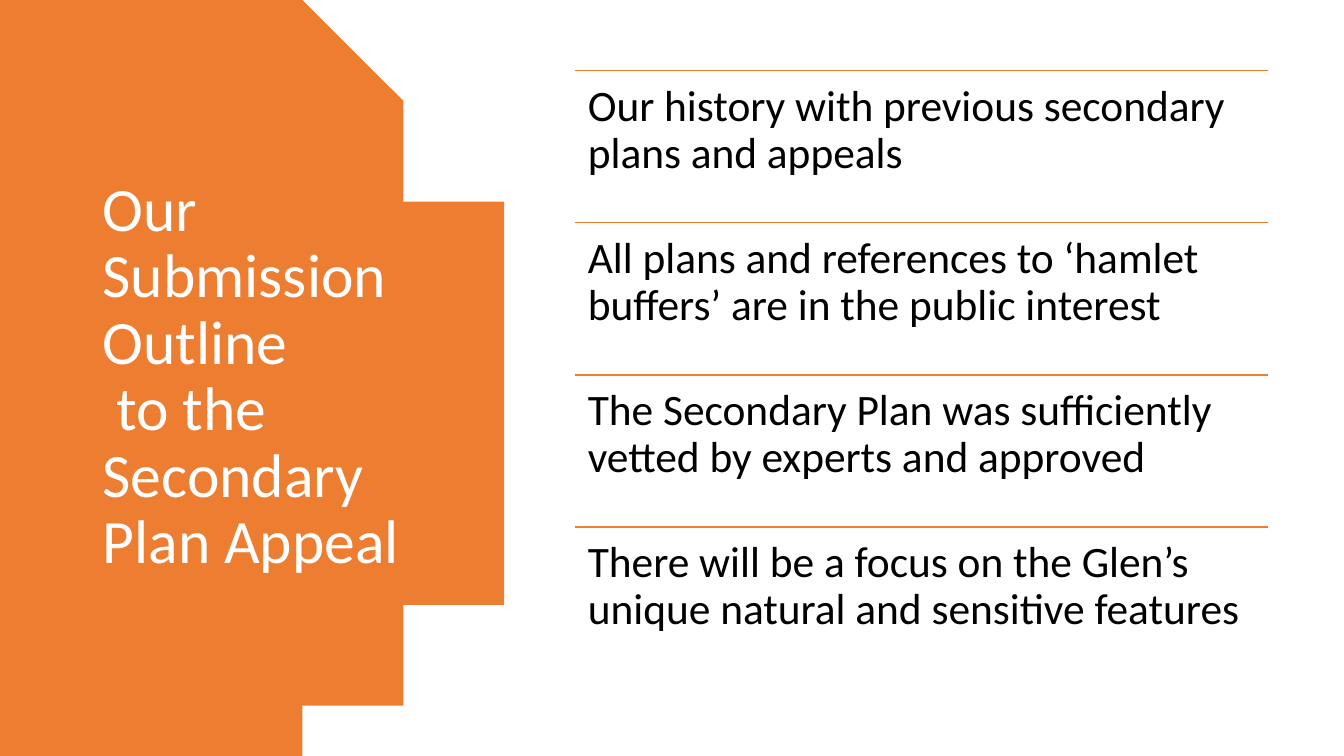
from math import asin, cos, sin
from lxml.etree import SubElement
from pptx import Presentation
from pptx.dml.color import RGBColor
from pptx.enum.shapes import MSO_CONNECTOR
from pptx.enum.text import MSO_ANCHOR
from pptx.oxml.ns import qn
from pptx.util import Inches, Pt

ORANGE = RGBColor(0xED, 0x7D, 0x31)
WHITE = RGBColor(0xFF, 0xFF, 0xFF)
BLACK = RGBColor(0, 0, 0)

WIDE, HIGH = 13.33, 7.5
LEFT, TOP, SPAN, ROW = 5.7, 0.7, 6.88, 1.51
RADIUS, EDGE = 4.4, 4.93
STEPS = 120

TITLE = ["Our Submission Outline", " to the Secondary Plan Appeal"]
POINTS = [
    "Our history with previous secondary plans and appeals",
    "All plans and references to ‘hamlet buffers’ are in the public interest",
    "The Secondary Plan was sufficiently vetted by experts and approved",
    "There will be a focus on the Glen’s unique natural and sensitive features",
]


def add_panel(slide):
    mid = HIGH / 2
    turn = asin(mid / RADIUS)
    angles = [turn * (2 * i / STEPS - 1) for i in range(STEPS + 1)]
    arc = [(EDGE - RADIUS + RADIUS * cos(a), mid + RADIUS * sin(a)) for a in angles]
    form = slide.shapes.build_freeform(0, 0, scale=Inches(1))
    form.add_line_segments(arc + [(0, HIGH)], close=True)
    panel = form.convert_to_shape()
    panel.shadow.inherit = False
    panel.fill.solid()
    panel.fill.fore_color.rgb = ORANGE
    panel.line.fill.background()


def add_text(slide, box, lines, size, color, inset=None, anchor=MSO_ANCHOR.TOP):
    frame = slide.shapes.add_textbox(*map(Inches, box)).text_frame
    frame.word_wrap = True
    frame.vertical_anchor = anchor
    if inset is not None:
        frame.margin_left = frame.margin_right = Inches(inset)
        frame.margin_top = frame.margin_bottom = Inches(inset)
    para = frame.paragraphs[0]
    para.line_spacing = 0.9
    for i, line in enumerate(lines):
        if i:
            para.add_line_break()
        run = para.add_run()
        run.text = line
        run.font.name = "Calibri"
        run.font.size = Pt(size)
        run.font.color.rgb = color


def add_rule(slide, top):
    ends = map(Inches, (LEFT, top, LEFT + SPAN, top))
    rule = slide.shapes.add_connector(MSO_CONNECTOR.STRAIGHT, *ends)
    rule.line.color.rgb = ORANGE
    rule.line.width = Pt(1)
    SubElement(rule.element.spPr, qn("a:effectLst"))


def main():
    deck = Presentation()
    deck.slide_width, deck.slide_height = Inches(WIDE), Inches(HIGH)
    slide = deck.slides.add_slide(deck.slide_layouts[6])
    add_panel(slide)
    add_text(slide, (0.92, TOP, 3.23, 6.09), TITLE, 44, WHITE, anchor=MSO_ANCHOR.MIDDLE)
    for i, point in enumerate(POINTS):
        top = TOP + i * ROW
        add_rule(slide, top)
        add_text(slide, (LEFT, top, SPAN, ROW), [point], 31, BLACK, inset=0.13)
    deck.save("out.pptx")


if __name__ == "__main__":
    main()
